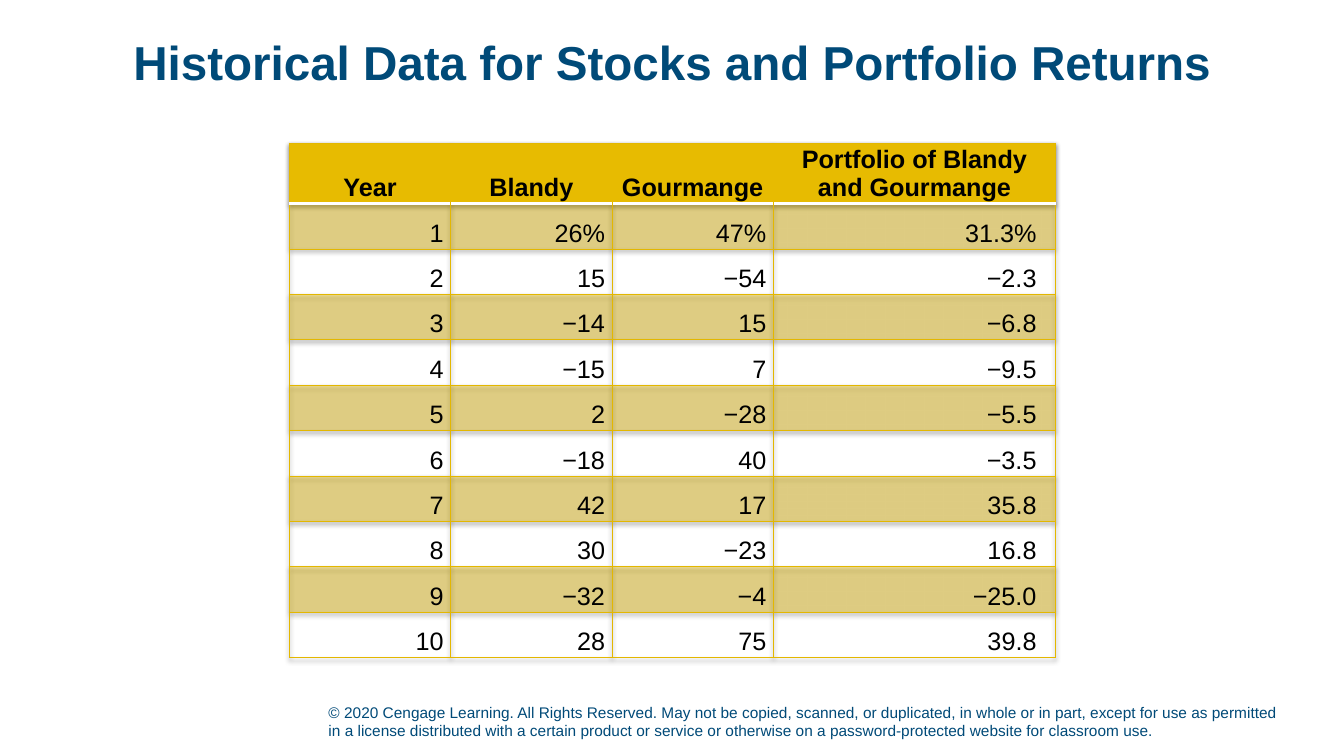
"""Build a slide with a table of yearly stock and portfolio returns."""
import pptx
import pptx.dml.color
import pptx.enum.text
import pptx.oxml
import pptx.oxml.ns
import pptx.util

TITLE = "Historical Data for Stocks and Portfolio Returns"
COPYRIGHT = (
    "© 2020 Cengage Learning. All Rights Reserved. May not be copied, scanned, or duplicated, "
    "in whole or in part, except for use as permitted in a license distributed with a certain "
    "product or service or otherwise on a password-protected website for classroom use."
)
HEADERS = ("Year", "Blandy", "Gourmange", "Portfolio of Blandy\vand Gourmange")
RETURNS = [
    ("1", "26%", "47%", "31.3%"),
    ("2", "15", "−54", "−2.3"),
    ("3", "−14", "15", "−6.8"),
    ("4", "−15", "7", "−9.5"),
    ("5", "2", "−28", "−5.5"),
    ("6", "−18", "40", "−3.5"),
    ("7", "42", "17", "35.8"),
    ("8", "30", "−23", "16.8"),
    ("9", "−32", "−4", "−25.0"),
    ("10", "28", "75", "39.8"),
]
COLORS = {"navy": "004A78", "gold": "E7BB01", "border": "E3B700",
          "black": "000000", "white": "FFFFFF"}
FONT = "Arial"
SLIDE_SIZE = (13.33, 7.5)
TITLE_BOX = (0.92, 0.15, 11.5, 1)
COPYRIGHT_BOX = (3.16, 6.89, 9.63, 0.5)
TABLE_ORIGIN = (2.87, 1.42)
COLUMN_WIDTHS = (1.6, 1.6, 1.6, 2.8)
ROW_HEIGHTS = [0.6] + [0.42] * len(RETURNS)
NO_STYLE = "{2D5ABB26-0587-4C30-8999-92F81FD0307C}"

Inches = pptx.util.Inches
ALIGN = pptx.enum.text.PP_ALIGN
ANCHOR = pptx.enum.text.MSO_ANCHOR


def rgb(name):
    return pptx.dml.color.RGBColor.from_string(COLORS[name])


def drawing_element(tag, content):
    namespace = pptx.oxml.ns.nsdecls("a")
    return pptx.oxml.parse_xml(f"<a:{tag} {namespace}>{content}</a:{tag}>")


def format_paragraph(paragraph, size, color, bold, align, spacing):
    paragraph.alignment = align
    paragraph.line_spacing = spacing
    for run in paragraph.runs:
        run.font.name = FONT
        run.font.size = pptx.util.Pt(size)
        run.font.bold = bold
        run.font.color.rgb = rgb(color)


def add_text(slide, box, text, size, bold, align, anchor, spacing):
    shape = slide.shapes.add_textbox(*map(Inches, box))
    frame = shape.text_frame
    frame.word_wrap = True
    frame.vertical_anchor = anchor
    frame.text = text
    format_paragraph(frame.paragraphs[0], size, "navy", bold, align, spacing)


def set_borders(cell, row, column):
    last_column = len(COLUMN_WIDTHS) - 1
    edges = {side: ("border", 0.75) for side in ("lnL", "lnR", "lnT", "lnB")}
    if row == 0:
        edges["lnB"] = ("white", 2)
        if column > 0:
            del edges["lnL"]
        if column < last_column:
            del edges["lnR"]
    elif row == 1:
        edges["lnT"] = ("white", 2)
    properties = cell._tc.get_or_add_tcPr()
    for index, (side, (color, width)) in enumerate(edges.items()):
        line = drawing_element(
            side, f'<a:solidFill><a:srgbClr val="{COLORS[color]}"/></a:solidFill>')
        line.set("w", str(pptx.util.Pt(width)))
        properties.insert(index, line)


def fill_cell(cell, row):
    if row > 0 and row % 2 == 0:
        cell.fill.background()
        return
    cell.fill.solid()
    cell.fill.fore_color.rgb = rgb("gold")
    if row > 0:
        color = cell._tc.tcPr.find(".//" + pptx.oxml.ns.qn("a:srgbClr"))
        color.append(drawing_element("alpha", ""))
        color[0].set("val", "40000")


def format_cell(cell, row, column, text):
    is_header = row == 0
    is_portfolio = column == len(COLUMN_WIDTHS) - 1
    cell.text = text
    cell.vertical_anchor = ANCHOR.MIDDLE
    left, right = (0, 0.19) if is_portfolio and not is_header else (0.07, 0.07)
    cell.margin_left, cell.margin_right = Inches(left), Inches(right)
    cell.margin_top = cell.margin_bottom = 0
    if is_header:
        spacing = 1 if is_portfolio else 2
    else:
        spacing = 1.5
    format_paragraph(cell.text_frame.paragraphs[0], 18, "black", is_header,
                     ALIGN.CENTER if is_header else ALIGN.RIGHT, spacing)
    fill_cell(cell, row)
    set_borders(cell, row, column)


def add_returns_table(slide):
    rows = [HEADERS] + RETURNS
    size = (sum(COLUMN_WIDTHS), sum(ROW_HEIGHTS))
    frame = slide.shapes.add_table(len(rows), len(HEADERS),
                                   *map(Inches, TABLE_ORIGIN + size))
    table = frame.table
    properties = table._tbl.tblPr
    properties.find(pptx.oxml.ns.qn("a:tableStyleId")).text = NO_STYLE
    properties.insert(0, drawing_element(
        "effectLst",
        '<a:outerShdw blurRad="40000" dist="20000" dir="5400000" rotWithShape="0">'
        '<a:srgbClr val="000000"><a:alpha val="38000"/></a:srgbClr></a:outerShdw>'))
    for column, width in zip(table.columns, COLUMN_WIDTHS):
        column.width = Inches(width)
    for row, height in zip(table.rows, ROW_HEIGHTS):
        row.height = Inches(height)
    for row, texts in enumerate(rows):
        for column, text in enumerate(texts):
            format_cell(table.cell(row, column), row, column, text)


def main():
    presentation = pptx.Presentation()
    presentation.slide_width, presentation.slide_height = map(Inches, SLIDE_SIZE)
    slide = presentation.slides.add_slide(presentation.slide_layouts[6])
    add_text(slide, COPYRIGHT_BOX, COPYRIGHT, 11, False, ALIGN.LEFT, ANCHOR.BOTTOM, 1)
    add_text(slide, TITLE_BOX, TITLE, 34, True, ALIGN.CENTER, ANCHOR.MIDDLE, 0.9)
    add_returns_table(slide)
    presentation.save("out.pptx")


if __name__ == "__main__":
    main()
